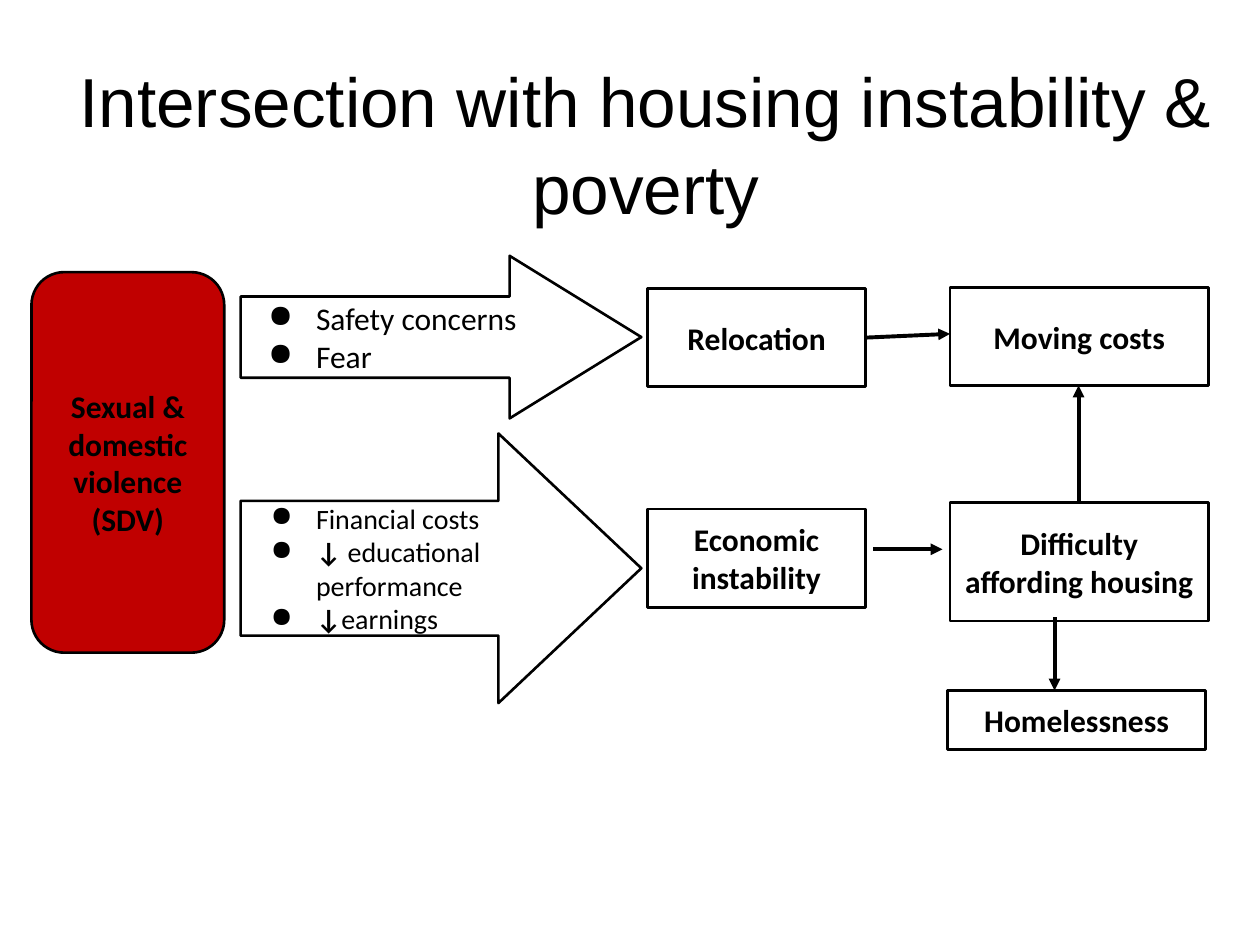
from lxml import etree
from pptx import Presentation
from pptx import util as u
from pptx.dml.color import RGBColor
from pptx.enum import shapes, text
from pptx.oxml.ns import qn

BLACK = RGBColor(0, 0, 0)
WHITE = RGBColor(255, 255, 255)
RED = RGBColor(0xC0, 0, 0)
WIDTH, HEIGHT = u.Inches(10), u.Inches(7.5)
KIND = shapes.MSO_SHAPE

# Shared edges, in percent of the slide's width or height
ARROW_X, ARROW_W = 19.1, 31.8
CAUSE_X, CAUSE_W = 51.4, 17.3
EFFECT_X, EFFECT_W = 75.4, 20.5
BOX_H = 10.4


def across(percent):
    return round(WIDTH * percent / 100)


def down(percent):
    return round(HEIGHT * percent / 100)


def area(x, y, w, h):
    return across(x), down(y), across(w), down(h)


def add_run(p, wording, size, bold=False, font="Calibri"):
    r = p.add_run()
    r.text = wording
    r.font.name, r.font.size, r.font.bold = font, u.Pt(size), bold
    r.font.color.rgb = BLACK


def add_title(s, wording):
    sp = s.shapes.title
    sp.left, sp.top, sp.width, sp.height = area(5, 7.73, 92.5, 14.4)
    tf = sp.text_frame
    tf.auto_size = text.MSO_AUTO_SIZE.NONE
    tf.vertical_anchor = text.MSO_ANCHOR.MIDDLE
    p = tf.paragraphs[0]
    p.alignment = text.PP_ALIGN.CENTER
    p.line_spacing = 1.05
    add_run(p, wording, 39.6, font="Arial")


def add_outlined(s, kind, place, fill, adjustments=()):
    """Add a black-edged shape and return its empty text frame."""
    sp = s.shapes.add_shape(kind, *area(*place))
    sp.shadow.inherit = False
    for i, value in enumerate(adjustments):
        sp.adjustments[i] = value
    sp.fill.solid()
    sp.fill.fore_color.rgb = fill
    sp.line.color.rgb = BLACK
    sp.line.width = u.Pt(1.5)
    tf = sp.text_frame
    tf.word_wrap = True
    tf.vertical_anchor = text.MSO_ANCHOR.MIDDLE
    tf.margin_left = tf.margin_right = u.Inches(0.1)
    tf.margin_top = tf.margin_bottom = u.Inches(0.1)
    return tf


def add_box(s, wording, place, kind=KIND.RECTANGLE, fill=WHITE, adjustments=()):
    p = add_outlined(s, kind, place, fill, adjustments).paragraphs[0]
    p.alignment = text.PP_ALIGN.CENTER
    add_run(p, wording, 18, bold=True)


def set_bullet(p, hanging):
    pPr = p._p.get_or_add_pPr()
    pPr.set("marL", str(u.Inches(0.5)))
    pPr.set("indent", str(-u.Inches(hanging)))
    color = etree.SubElement(pPr, qn("a:buClr"))
    etree.SubElement(color, qn("a:srgbClr"), val=str(BLACK))
    etree.SubElement(pPr, qn("a:buChar"), char="●")


def add_bullet_arrow(s, items, y, h, head, size, hanging):
    """Each item is a pair: a bold lead, which may be empty, and plain text."""
    tf = add_outlined(s, KIND.RIGHT_ARROW, (ARROW_X, y, ARROW_W, h), WHITE, (0.5, head))
    for i, (lead, wording) in enumerate(items):
        p = tf.add_paragraph() if i else tf.paragraphs[0]
        p.alignment = text.PP_ALIGN.LEFT
        set_bullet(p, hanging)
        if lead:
            add_run(p, lead, size, bold=True)
        add_run(p, wording, size)


def add_link(s, x1, y1, x2, y2):
    line = s.shapes.add_connector(
        shapes.MSO_CONNECTOR.STRAIGHT, across(x1), down(y1), across(x2), down(y2))
    line.line.color.rgb = BLACK
    line.line.width = u.Pt(2.25)
    etree.SubElement(line.line._get_or_add_ln(), qn("a:tailEnd"), type="triangle")
    etree.SubElement(line._element.spPr, qn("a:effectLst"))


def main():
    prs = Presentation()
    prs.slide_width, prs.slide_height = WIDTH, HEIGHT
    s = prs.slides.add_slide(prs.slide_layouts[5])
    add_title(s, "Intersection with housing instability & poverty")

    add_box(s, "Sexual & domestic violence (SDV)", (2.5, 28.8, 15.3, 40.27),
            KIND.ROUNDED_RECTANGLE, RED, (0.17,))
    add_bullet_arrow(s, [("", "Safety concerns"), ("", "Fear")],
                     27.07, 17.2, 0.81, 18, 0.38)
    add_bullet_arrow(s, [("", "Financial costs"), ("↓ ", "educational performance"),
                         ("↓", "earnings")],
                     45.87, 28.53, 0.53, 16, 0.36)

    for wording, place in (
        ("Relocation", (CAUSE_X, 30.53, CAUSE_W, BOX_H)),
        ("Economic instability", (CAUSE_X, 53.87, CAUSE_W, BOX_H)),
        ("Moving costs", (EFFECT_X, 30.4, EFFECT_W, BOX_H)),
        ("Difficulty affording housing", (EFFECT_X, 53.2, EFFECT_W, 12.53)),
        ("Homelessness", (75.2, 73.07, EFFECT_W, 6.27)),
    ):
        add_box(s, wording, place)

    for ends in (
        (CAUSE_X + CAUSE_W, 35.73, EFFECT_X, 35.33),
        (69.3, 58.13, 74.8, 58.13),
        (85.6, 53.2, 85.6, 30.4 + BOX_H),
        (83.7, 65.33, 83.7, 73.07),
    ):
        add_link(s, *ends)

    prs.save("out.pptx")


if __name__ == "__main__":
    main()
